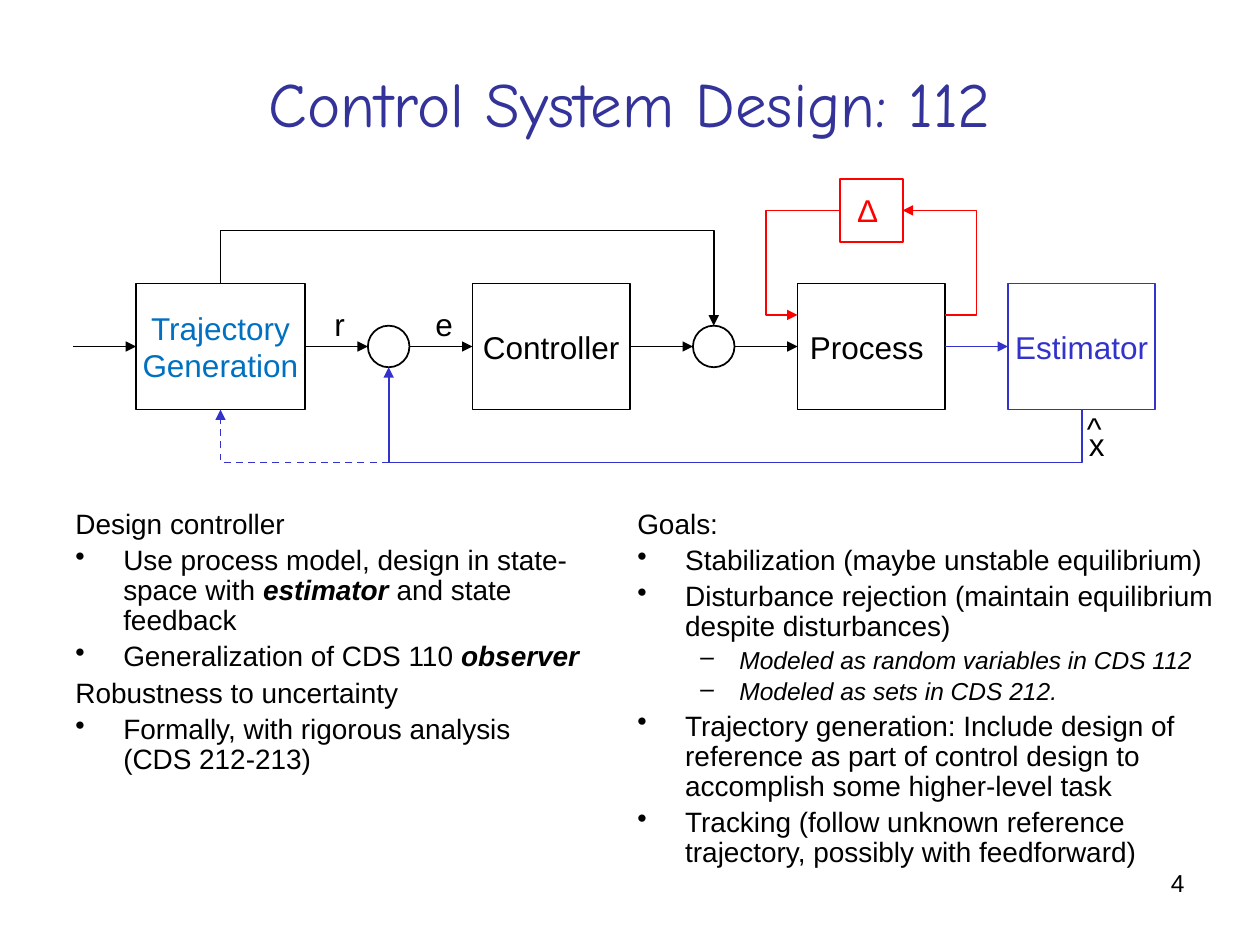
"""Builds the control system design slide."""
import lxml.etree
import pptx
import pptx.dml.color
import pptx.enum.dml
import pptx.enum.shapes
import pptx.enum.text
import pptx.oxml.ns
import pptx.util

Inches = pptx.util.Inches
Pt = pptx.util.Pt
RGBColor = pptx.dml.color.RGBColor
Shapes = pptx.enum.shapes.MSO_SHAPE
Align = pptx.enum.text.PP_ALIGN
Anchor = pptx.enum.text.MSO_ANCHOR
qn = pptx.oxml.ns.qn

BLACK = RGBColor(0x00, 0x00, 0x00)
WHITE = RGBColor(0xFF, 0xFF, 0xFF)
NAVY = RGBColor(0x33, 0x33, 0x99)
BLUE = RGBColor(0x33, 0x33, 0xCC)
SKY = RGBColor(0x00, 0x70, 0xC0)
RED = RGBColor(0xFF, 0x00, 0x00)

GAP = 0.5
BLOCK_HEIGHT = 1
JUNCTION = 0.33
DELTA = 0.5
AXIS = 1.33

DESIGN = [
    ("", "Design controller"),
    ("•", "Use process model, design in state-space with *estimator *and state feedback"),
    ("•", "Generalization of CDS 110 *observer"),
    ("", "Robustness to uncertainty"),
    ("•", "Formally, with rigorous analysis\v(CDS 212-213)"),
]
GOALS = [
    ("", "Goals:"),
    ("•", "Stabilization (maybe unstable equilibrium)"),
    ("•", "Disturbance rejection (maintain equilibrium despite disturbances)"),
    ("–", "Modeled as random variables in CDS 112"),
    ("–", "Modeled as sets in CDS 212."),
    ("•", "Trajectory generation: Include design of reference as part of control "
          "design to accomplish some higher-level task"),
    ("•", "Tracking (follow unknown reference trajectory, possibly with feedforward)"),
]


def write_text(text_frame, text, size, color, align=Align.CENTER, font="Arial"):
    """Set the text of a frame and format every run alike."""
    text_frame.text = text
    for paragraph in text_frame.paragraphs:
        paragraph.alignment = align
        for run in paragraph.runs:
            run.font.size = Pt(size)
            run.font.name = font
            run.font.color.rgb = color


def center_tightly(text_frame):
    """Centre unwrapped text without margins."""
    text_frame.margin_left = text_frame.margin_right = 0
    text_frame.margin_top = text_frame.margin_bottom = 0
    text_frame.vertical_anchor = Anchor.MIDDLE
    text_frame.word_wrap = False


def add_outlined(slide, kind, left, top, width, height, color=BLACK, text="", text_color=None):
    """Add a white shape with a thin outline and an optional label."""
    shape = slide.shapes.add_shape(
        kind, Inches(left), Inches(top), Inches(width), Inches(height))
    shape.shadow.inherit = False
    shape.fill.solid()
    shape.fill.fore_color.rgb = WHITE
    shape.line.color.rgb = color
    shape.line.width = Pt(1)
    if text:
        center_tightly(shape.text_frame)
        write_text(shape.text_frame, text, 18, text_color or color)
    return shape


def style_arrow(line, color):
    """Give a line its colour, its width and an arrowhead at its end."""
    line.color.rgb = color
    line.width = Pt(1)
    properties = line._get_or_add_ln()
    lxml.etree.SubElement(properties, qn("a:tailEnd"), type="triangle")


def add_arrow(slide, start, end, y, color=BLACK, source=None, target=None):
    """Draw a level arrow, joined to the given rectangles."""
    connector = slide.shapes.add_connector(
        pptx.enum.shapes.MSO_CONNECTOR.STRAIGHT,
        Inches(start), Inches(y), Inches(end), Inches(y))
    if source is not None:
        connector.begin_connect(source, 3)
    if target is not None:
        connector.end_connect(target, 1)
    style_arrow(connector.line, color)
    lxml.etree.SubElement(connector._element.spPr, qn("a:effectLst"))


def add_path(slide, points, color=BLACK, dashed=False):
    """Draw an open angular path that ends in an arrowhead."""
    corners = [(Inches(x), Inches(y)) for x, y in points]
    builder = slide.shapes.build_freeform(*corners[0])
    builder.add_line_segments(corners[1:], close=False)
    shape = builder.convert_to_shape()
    shape.shadow.inherit = False
    shape.fill.background()
    if dashed:
        shape.line.dash_style = pptx.enum.dml.MSO_LINE.DASH
    style_arrow(shape.line, color)


def add_label(slide, text, center, middle):
    """Place a signal name around a point."""
    width, height = 0.22, 0.3
    box = slide.shapes.add_textbox(
        Inches(center - width / 2), Inches(middle - height / 2), Inches(width), Inches(height))
    center_tightly(box.text_frame)
    write_text(box.text_frame, text, 18, BLACK)


def add_diagram(slide, left, top):
    """Draw the control loop from its upper left corner."""
    axis = top + AXIS
    block_top, block_bottom = axis - BLOCK_HEIGHT / 2, axis + BLOCK_HEIGHT / 2
    stages = [
        ("Trajectory\nGeneration", 1.34, BLACK, SKY),
        ("", JUNCTION, BLACK, None),
        ("Controller", 1.25, BLACK, BLACK),
        ("", JUNCTION, BLACK, None),
        ("Process ", 1.17, BLACK, BLACK),
        ("Estimator", 1.17, BLUE, BLUE),
    ]
    centers = []
    previous, x = None, left
    for text, width, color, text_color in stages:
        start, x = x, x + GAP
        if text:
            shape = add_outlined(slide, Shapes.RECTANGLE, x, block_top, width,
                                 BLOCK_HEIGHT, color, text, text_color)
        else:
            shape = add_outlined(slide, Shapes.OVAL, x, axis - JUNCTION / 2,
                                 JUNCTION, JUNCTION)
        block = shape if text else None
        add_arrow(slide, start, x, axis, color, previous, block)
        centers.append(x + width / 2)
        previous, x = block, x + width

    trajectory, error_sum, _, input_sum, process, estimator = centers
    feedforward, feedback = block_top - 0.42, block_bottom + 0.42
    add_path(slide, [(trajectory, block_top), (trajectory, feedforward),
                     (input_sum, feedforward), (input_sum, axis - JUNCTION / 2)])
    add_path(slide, [(estimator, block_bottom), (estimator, feedback),
                     (error_sum, feedback), (error_sum, axis + JUNCTION / 2)], BLUE)
    add_path(slide, [(error_sum, feedback), (trajectory, feedback),
                     (trajectory, block_bottom)], BLUE, dashed=True)

    add_outlined(slide, Shapes.RECTANGLE, process - DELTA / 2, top, DELTA, DELTA, RED, "Δ ")
    edge, level, delta_level = 1.17 / 2, axis - 0.25, top + DELTA / 2
    right_loop = [(process + edge, level), (process + edge + 0.25, level),
                  (process + edge + 0.25, delta_level), (process + DELTA / 2, delta_level)]
    left_loop = [(2 * process - x, y) for x, y in reversed(right_loop)]
    for loop in (right_loop, left_loop):
        add_path(slide, loop, RED)

    add_label(slide, "r", error_sum - 0.39, axis - 0.18)
    add_label(slide, "e", error_sum + 0.44, axis - 0.18)
    add_label(slide, "x", estimator + 0.12, block_bottom + 0.27)
    add_label(slide, "^", estimator + 0.1, block_bottom + 0.15)


def add_text_line(slide, text, left, top, width, height, size, color, align, font="Arial"):
    """Place one line of text in the middle of its box."""
    box = slide.shapes.add_textbox(Inches(left), Inches(top), Inches(width), Inches(height))
    box.text_frame.word_wrap = True
    box.text_frame.vertical_anchor = Anchor.MIDDLE
    write_text(box.text_frame, text, size, color, align, font)


def add_outline(slide, items, left, top, width, height):
    """Fill a box with headings, bullets and italic sub-bullets."""
    box = slide.shapes.add_textbox(Inches(left), Inches(top), Inches(width), Inches(height))
    text_frame = box.text_frame
    text_frame.word_wrap = True
    for index, (bullet, text) in enumerate(items):
        paragraph = text_frame.add_paragraph() if index else text_frame.paragraphs[0]
        sub = bullet == "–"
        size = 14 if sub else 16
        margin, indent = (0.81, -0.31) if sub else (0.38, -0.38)
        paragraph.level = int(sub)
        paragraph.line_spacing = 0.9
        paragraph.space_before = Pt(size * 0.21)
        properties = paragraph._p.get_or_add_pPr()
        properties.set("marL", str(Inches(margin)))
        properties.set("indent", str(Inches(indent)))
        if bullet:
            lxml.etree.SubElement(properties, qn("a:buChar"), char=bullet)
        plain, *others = text.split("*")
        paragraph.text = plain
        for part in others:
            paragraph.add_run().text = part
        for position, run in enumerate(paragraph.runs):
            strong = bool(others) and position == 1
            run.font.size = Pt(size)
            run.font.name = "Arial"
            run.font.color.rgb = BLACK
            run.font.bold = strong
            run.font.italic = strong or sub


def main():
    """Build and save the presentation."""
    presentation = pptx.Presentation()
    presentation.slide_width, presentation.slide_height = Inches(10), Inches(7.5)
    slide = presentation.slides.add_slide(presentation.slide_layouts[6])
    add_text_line(slide, "Control System Design: 112", 0.5, 0.3, 9, 1.03,
                  36, NAVY, Align.CENTER, "Comic Neue")
    add_diagram(slide, 0.58, 1.42)
    add_outline(slide, DESIGN, 0.5, 4, 4.42, 2.7)
    add_outline(slide, GOALS, 4.96, 4, 4.79, 2.7)
    add_text_line(slide, "4", 7.17, 6.83, 2.33, 0.35, 14, BLACK, Align.RIGHT)
    presentation.save("out.pptx")


if __name__ == "__main__":
    main()
